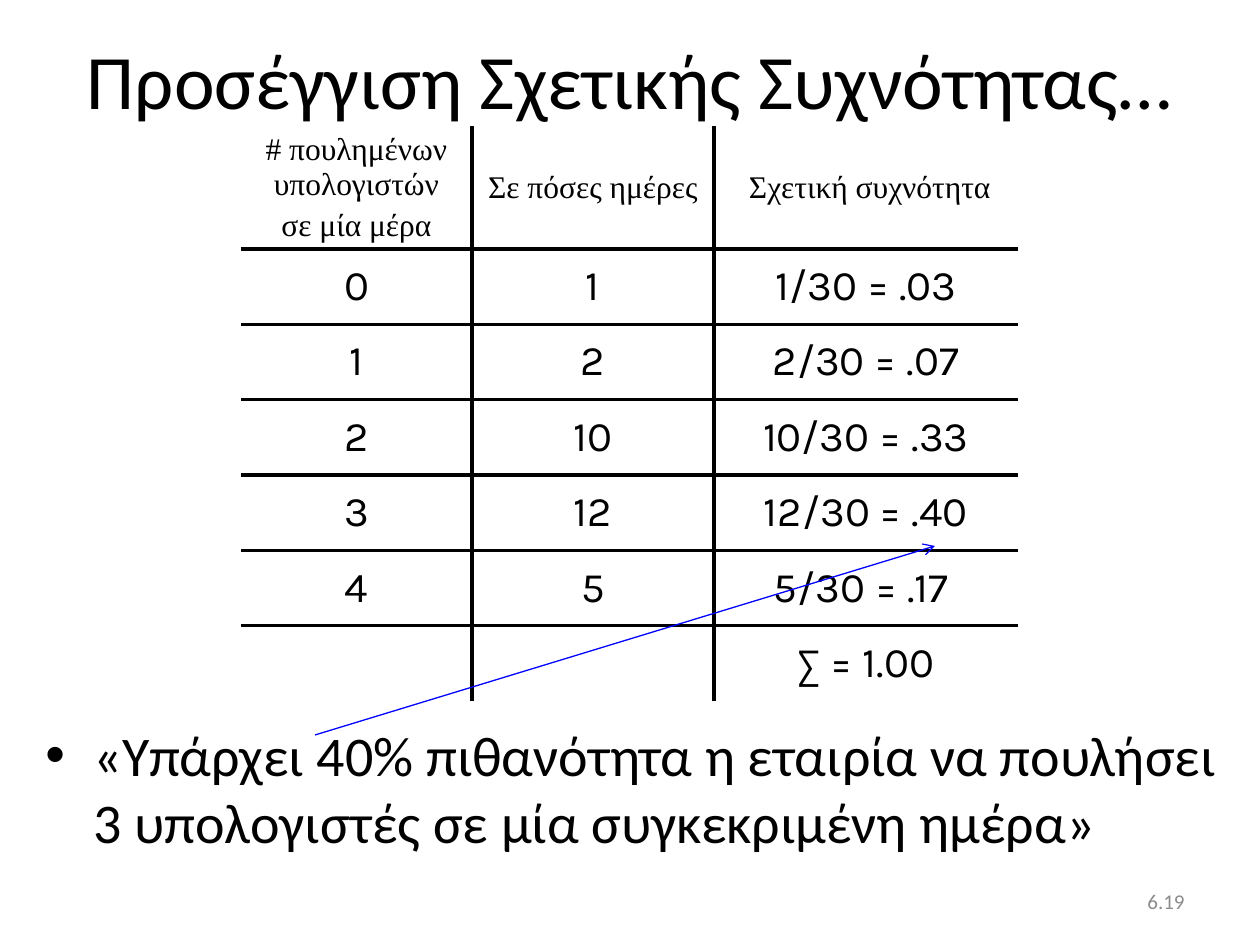
from lxml.etree import SubElement
from pptx import Presentation
from pptx.dml.color import RGBColor
from pptx.enum.shapes import MSO_CONNECTOR
from pptx.enum.text import MSO_ANCHOR as ANCHOR, PP_ALIGN as ALIGN
from pptx.oxml.ns import qn
from pptx.util import Pt

SCALE = 914400 / 126


def px(*lengths):
    return [round(n * SCALE) for n in lengths]


def style(paragraph, face, size, color="000000", align=ALIGN.LEFT):
    paragraph.alignment = align
    paragraph.font.name = face
    paragraph.font.size = Pt(size)
    paragraph.font.color.rgb = RGBColor.from_string(color)


prs = Presentation()
prs.slide_width, prs.slide_height = px(1260, 945)
slide = prs.slides.add_slide(prs.slide_layouts[6])

texts = [
    ("6.19", (903, 876, 294, 50), 12, "8C8C8C", ALIGN.RIGHT, ANCHOR.MIDDLE),
    ("Προσέγγιση Σχετικής Συχνότητας…", (63, 0, 1134, 158), 44, "000000",
     ALIGN.CENTER, ANCHOR.MIDDLE),
    ("«Υπάρχει 40% πιθανότητα η εταιρία να πουλήσει 3 υπολογιστές σε μία "
     "συγκεκριμένη ημέρα»", (33, 714, 1227, 168), 32, "000000",
     ALIGN.LEFT, ANCHOR.TOP),
]
for text, place, size, color, align, anchor in texts:
    frame = slide.shapes.add_textbox(*px(*place)).text_frame
    frame.word_wrap = True
    frame.vertical_anchor = anchor
    frame.text = text
    style(frame.paragraphs[0], "Calibri", size, color, align)

conclusion = frame.paragraphs[0]
indent, = px(48)
props = conclusion._p.get_or_add_pPr()
props.set("marL", str(indent))
props.set("indent", str(-indent))
bullet_font = props.makeelement(qn("a:buFont"), {"typeface": "Arial"})
bullet = props.makeelement(qn("a:buChar"), {"char": "•"})
props.insert(0, bullet_font)
props.insert(1, bullet)

rows = [
    ("# πουλημένων υπολογιστών\nσε μία μέρα", "Σε πόσες ημέρες", " Σχετική συχνότητα"),
    ("0", "1", "1/30 = .03"),
    ("1", "2", "2/30 = .07"),
    ("2", "10", "10/30 = .33"),
    ("3", "12", "12/30 = .40"),
    ("4", "5", "5/30 = .17 "),
    ("", "", "∑ = 1.00"),
]
widths = px(231, 242, 304)
heights = px(123, *[75.4] * 6)
frequencies = slide.shapes.add_table(
    len(rows), len(widths), *px(241, 126), sum(widths), sum(heights)).table
frequencies.first_row = frequencies.horz_banding = False
for column, width in zip(frequencies.columns, widths):
    column.width = width

last_row, last_column = len(rows) - 1, len(widths) - 1
for r, row in enumerate(rows):
    frequencies.rows[r].height = heights[r]
    face, size = ("Times New Roman", 18) if r == 0 else ("Karla", 24)
    for c, text in enumerate(row):
        cell = frequencies.cell(r, c)
        cell.vertical_anchor = ANCHOR.MIDDLE
        if r == 0:
            cell.margin_top = cell.margin_bottom = 0
        cell.text = text
        for i, paragraph in enumerate(cell.text_frame.paragraphs):
            style(paragraph, face, size, align=ALIGN.CENTER)
            if i:
                paragraph.space_before = Pt(3.6)
        cell_props = cell._tc.get_or_add_tcPr()
        edges = {"L": c > 0, "R": c < last_column, "T": r > 0, "B": r < last_row}
        for side, ruled in edges.items():
            edge = SubElement(cell_props, qn(f"a:ln{side}"), w=str(Pt(2.25)))
            if ruled:
                fill = SubElement(edge, qn("a:solidFill"))
                SubElement(fill, qn("a:srgbClr"), val="000000")
            else:
                SubElement(edge, qn("a:noFill"))
        cell.fill.background()

pointer = slide.shapes.add_connector(MSO_CONNECTOR.STRAIGHT, *px(315, 735, 935, 546))
pointer.line.color.rgb = RGBColor.from_string("0000FF")
pointer.line.width = Pt(0.75)
SubElement(pointer.line._get_or_add_ln(), qn("a:tailEnd"), type="arrow")
SubElement(pointer._element.spPr, qn("a:effectLst"))

prs.save("out.pptx")
